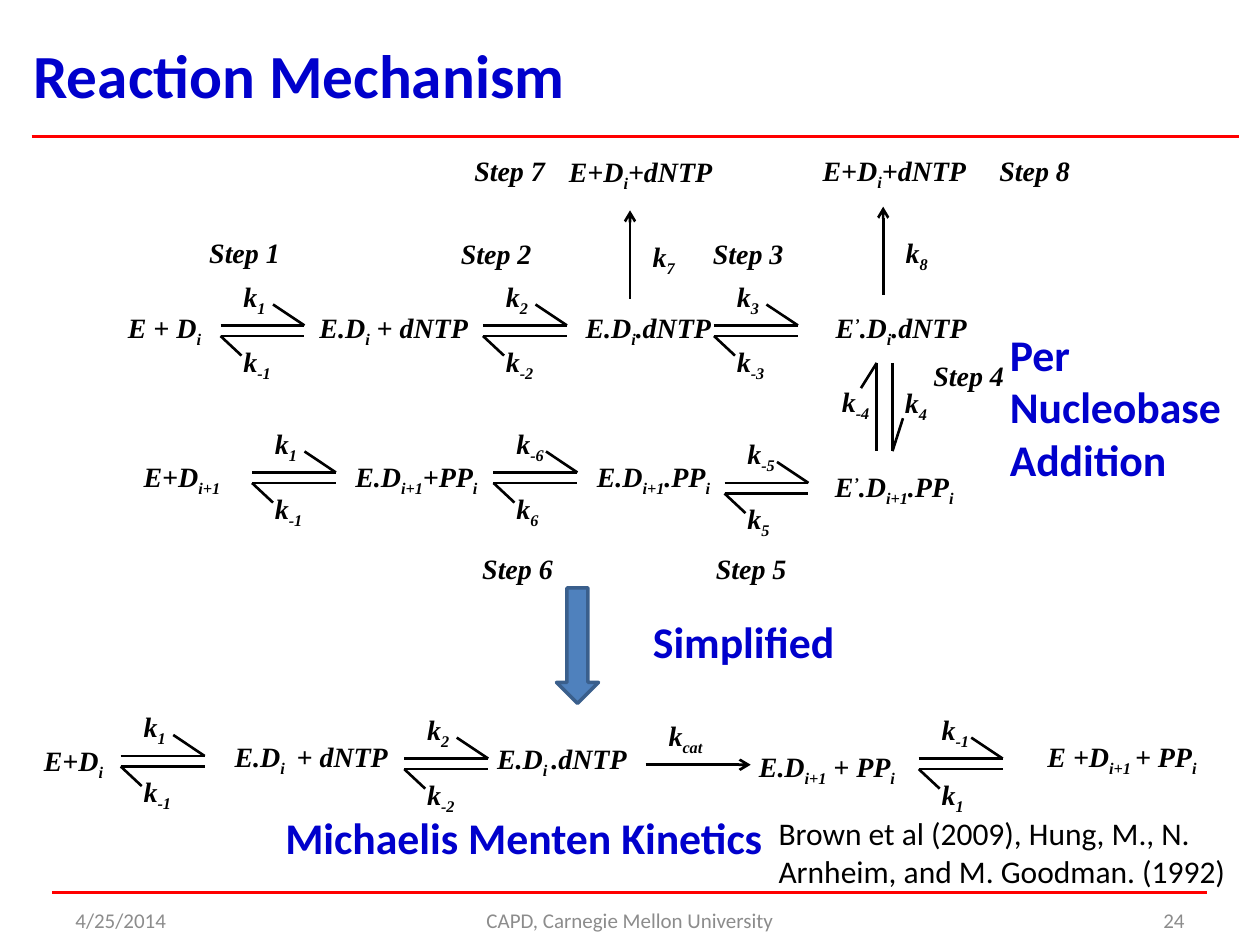
from pptx import Presentation
from pptx.dml.color import RGBColor
from pptx.enum.shapes import MSO_CONNECTOR as CONN, MSO_SHAPE as SHAPE
from pptx.enum.text import MSO_ANCHOR as ANCHOR, MSO_AUTO_SIZE as FIT, PP_ALIGN as ALIGN
from pptx.oxml.ns import qn
from pptx.util import Pt
from lxml import etree

BLACK = RGBColor(0x00, 0x00, 0x00)
BLUE = RGBColor(0x00, 0x00, 0xCC)
RED = RGBColor(0xFF, 0x00, 0x00)
GREY = RGBColor(0x8C, 0x8C, 0x8C)
ARROW_FILL = RGBColor(0x4F, 0x81, 0xBD)
ARROW_LINE = RGBColor(0x3A, 0x5F, 0x8C)

SANS, SERIF = "Calibri", "Times New Roman"
ROW_H = 26.6
BASELINES = {"_": "-25000", "^": "30000"}


class Scheme:
    def __init__(self, slide):
        self.s = slide

    def box(self, x, y, w, h, anchor=ANCHOR.TOP, align=ALIGN.LEFT, fit=FIT.SHAPE_TO_FIT_TEXT):
        tf = self.s.shapes.add_textbox(Pt(x), Pt(y), Pt(w), Pt(h)).text_frame
        tf.word_wrap = True
        tf.auto_size = fit
        tf.vertical_anchor = anchor
        p = tf.paragraphs[0]
        p.alignment = align
        return p

    def run(self, p, text, size, color, name=SANS, bold=False, italic=False):
        r = p.add_run()
        r.text = text
        r.font.name, r.font.size = name, Pt(size)
        r.font.bold, r.font.italic = bold, italic
        r.font.color.rgb = color
        return r

    def heading(self, text, x, y, w, h, size=25):
        self.run(self.box(x, y, w, h), text, size, BLUE, bold=True)

    def footer(self, text, x, w, align):
        p = self.box(x, 511.2, w, 28.8, ANCHOR.MIDDLE, align, FIT.NONE)
        self.run(p, text, 12, GREY)

    def formula(self, text, x, y, w=97):
        """Parts are split by |; a leading _ lowers a part and ^ raises it."""
        p = self.box(x, y, w, ROW_H)
        for part in text.split("|"):
            r = self.run(p, part.lstrip("_^"), 16, BLACK, SERIF, True, True)
            if part[0] in BASELINES:
                r.font._element.set("baseline", BASELINES[part[0]])

    def line(self, x1, y1, x2, y2, color=BLACK, width=1.5, arrow=False):
        c = self.s.shapes.add_connector(CONN.STRAIGHT, Pt(x1), Pt(y1), Pt(x2), Pt(y2))
        c.line.color.rgb = color
        c.line.width = Pt(width)
        if arrow:
            etree.SubElement(c.line._get_or_add_ln(), qn("a:tailEnd"), type="arrow")
        etree.SubElement(c._element.spPr, qn("a:effectLst"))

    def equilibrium(self, x, y, forward, back):
        """Two half-barbed lines with a rate constant above and below."""
        self.line(x, y, x + 48, y)
        self.line(x, y + 6, x + 48, y + 6)
        self.line(x, y + 6, x + 12, y + 17.2)
        self.line(x + 48, y, x + 30, y - 12)
        self.formula(f"k|_{forward}", x + 6, y - 30, 42)
        self.formula(f"k|_{back}", x + 6, y + 7.2, 42)

    def down_arrow(self, x, y, w, h):
        sp = self.s.shapes.add_shape(SHAPE.DOWN_ARROW, Pt(x), Pt(y), Pt(w), Pt(h))
        sp.shadow.inherit = False
        sp.fill.solid()
        sp.fill.fore_color.rgb = ARROW_FILL
        sp.line.color.rgb = ARROW_LINE
        sp.line.width = Pt(2)


EQUILIBRIA = [
    (126, 186, "1", "-1"), (276, 186, "2", "-2"), (408, 186, "3", "-3"),
    (144, 270, "1", "-1"), (282, 270, "-6", "6"), (414, 276, "-5", "5"),
    (69, 432, "1", "-1"), (231, 433.5, "2", "-2"), (525, 433.5, "-1", "1"),
]

SPECIES = [
    # forward steps
    ("E + D|_i", 66, 174, 70), ("E.D|_i| + dNTP", 175.5, 174, 108),
    ("E.D|_i|.dNTP", 327.5, 174, 95), ("E|^’|.D|_i|.dNTP", 470.5, 174, 100),
    # dissociation products
    ("E+D|_i|+dNTP", 318, 85, 99), ("E+D|_i|+dNTP", 463, 84.3, 99),
    # return steps
    ("E+D|_i+1", 75, 259.2, 67), ("E.D|_i+1|+PP|_i", 196, 259.2, 93),
    ("E.D|_i+1|.PP|_i", 334, 259.2, 87), ("E|^’|.D|_i+1|.PP|_i", 470, 265, 90),
    # simplified mechanism
    ("E+D|_i", 18, 421.2, 53), ("E.D|_i", 127, 419, 52), ("+ dNTP", 162.5, 419, 75),
    ("E.D|_i |.dNTP", 277, 420.5, 92), ("E.D|_i+1| + PP|_i", 426.6, 424.8, 100),
    ("E +D|_i+1 |+ PP|_i", 591.5, 419, 108),
]

RATES = [("7", 365.8, 133.2), ("8", 510.5, 131), ("-4", 474, 216), ("4", 510, 216.7),
         ("cat", 375, 406.8)]

STEPS = [(1, 112.5, 131), (2, 256.3, 131.8), (3, 400.3, 131.8), (4, 526.3, 201.6),
         (5, 402, 311.8), (6, 268.5, 311.8), (7, 264, 84.3), (8, 564, 84.3)]


def main():
    prs = Presentation()
    prs.slide_width, prs.slide_height = Pt(720), Pt(540)
    d = Scheme(prs.slides.add_slide(prs.slide_layouts[6]))

    d.line(18, 78, 708, 78, RED, 2.25)
    d.line(30, 510, 690, 510, RED, 2.25)
    d.footer("4/25/2014", 36, 168, ALIGN.LEFT)
    d.footer("CAPD, Carnegie Mellon University", 246, 228, ALIGN.CENTER)
    d.footer("24", 516, 168, ALIGN.RIGHT)
    d.heading("Reaction Mechanism", 12, 18, 660, 49.7, 35)

    for item in EQUILIBRIA:
        d.equilibrium(*item)
    for item in SPECIES:
        d.formula(*item)
    for index, x, y in RATES:
        d.formula(f"k|_{index}", x, y, 42)
    for number, x, y in STEPS:
        d.formula(f"Step {number}", x, y)

    # Steps 7, 8 and the irreversible catalytic step
    d.line(360, 170.6, 360, 120.2, arrow=True)
    d.line(504.7, 168.5, 504.7, 118.1, arrow=True)
    d.line(369, 437, 429, 437, arrow=True)

    # Step 4, the vertical equilibrium
    for x in (501, 510):
        d.line(x, 207.4, x, 257.8)
    d.line(501, 207.4, 492, 221.8)
    d.line(510, 257.8, 516, 239)

    d.heading("Per Nucleobase Addition", 570, 183.6, 150, 98)
    d.down_arrow(318, 336, 24, 66)
    d.heading("Simplified", 366, 347.8, 150, 37.4)
    d.heading("Michaelis Menten Kinetics", 156, 460, 438, 37.4)
    d.run(d.box(437.8, 461.5, 282, 50.5),
          "Brown et al (2009), Hung, M., N. Arnheim, and M. Goodman. (1992)", 18, BLACK)

    prs.save("out.pptx")


if __name__ == "__main__":
    main()
